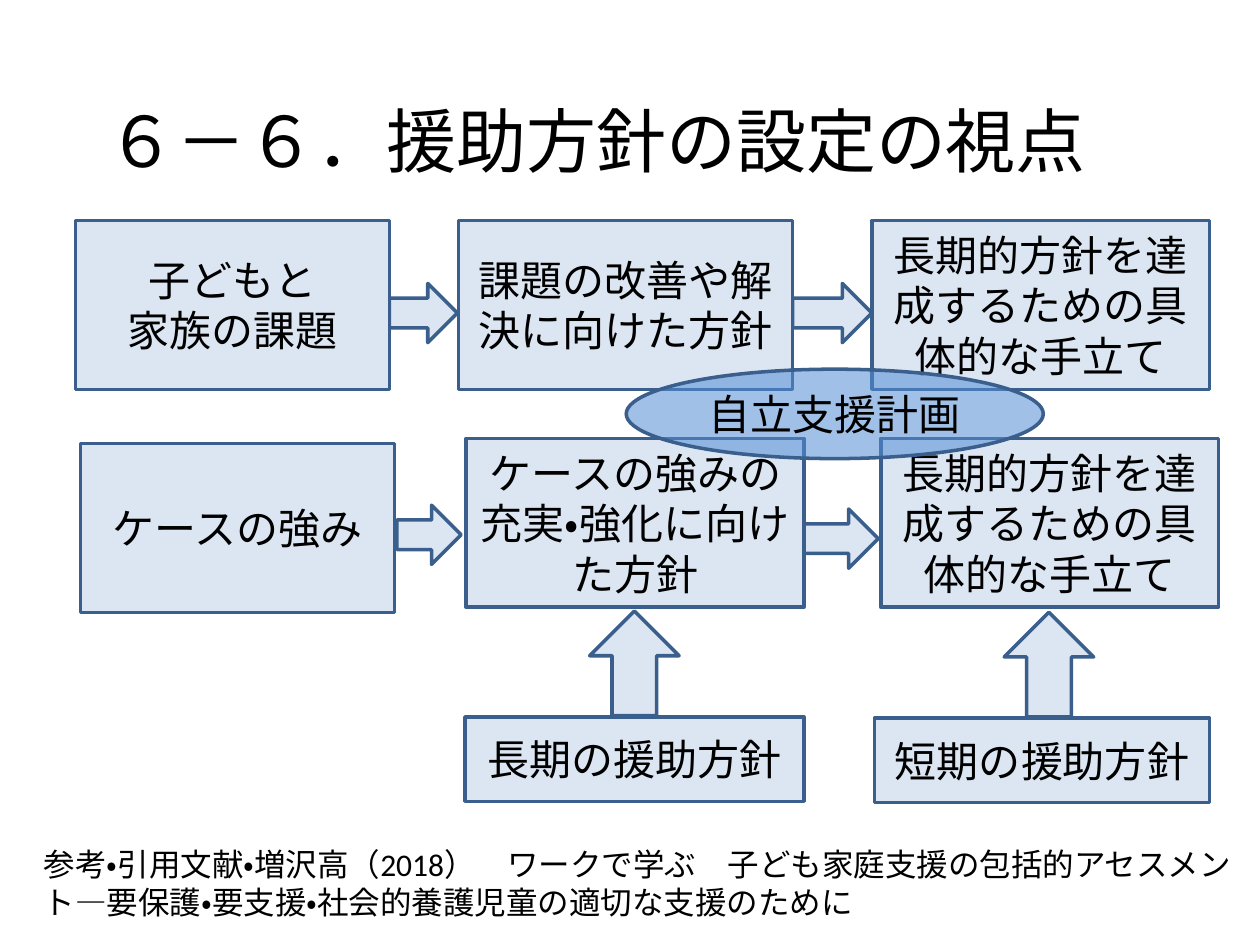
import pptx
import pptx.util
import pptx.dml.color
import pptx.enum.lang
import pptx.enum.shapes
import pptx.enum.text
import pptx.oxml
import pptx.oxml.ns
from pptx.util import Inches

SHAPE = pptx.enum.shapes.MSO_SHAPE
ALIGN = pptx.enum.text.PP_ALIGN
ANCHOR = pptx.enum.text.MSO_ANCHOR
PALE_BLUE = pptx.dml.color.RGBColor(0xDC, 0xE6, 0xF2)
MID_BLUE = pptx.dml.color.RGBColor(0x55, 0x8E, 0xD5)
EDGE_BLUE = pptx.dml.color.RGBColor(0x3A, 0x5F, 0x8C)
BLACK = pptx.dml.color.RGBColor(0, 0, 0)

ROW_HEIGHT = 1.34
GOAL_HEIGHT = 0.67
ARROW_HEIGHT = 0.47


def write(shape, lines, size, font="Calibri", align=ALIGN.CENTER, anchor=ANCHOR.MIDDLE):
    """Fill a shape with one paragraph per line."""
    frame = shape.text_frame
    frame.word_wrap = True
    frame.vertical_anchor = anchor
    for index, line in enumerate(lines):
        para = frame.paragraphs[0] if index == 0 else frame.add_paragraph()
        para.alignment = align
        span = para.add_run()
        span.text = line
        span.font.size = pptx.util.Pt(size)
        span.font.name = font
        span.font.color.rgb = BLACK
        span.font.language_id = pptx.enum.lang.MSO_LANGUAGE_ID.JAPANESE


def add_figure(page, kind, box, lines=(), fill=PALE_BLUE):
    """Draw an outlined preset shape in box (left, top, width, height)."""
    shape = page.shapes.add_shape(kind, *map(Inches, box))
    shape.shadow.inherit = False
    shape.fill.solid()
    shape.fill.fore_color.rgb = fill
    shape.line.color.rgb = EDGE_BLUE
    shape.line.width = pptx.util.Pt(2)
    write(shape, lines, 24)
    return shape


def add_text(page, box, line, size, font, anchor):
    """Place plain left-aligned text."""
    text_box = page.shapes.add_textbox(*map(Inches, box))
    write(text_box, [line], size, font, ALIGN.LEFT, anchor)


def add_flow_row(page, boxes, arrows):
    """Draw a left-to-right row; arrows lie behind the boxes they join."""
    for left, top, width in arrows:
        add_figure(page, SHAPE.RIGHT_ARROW, (left, top, width, ARROW_HEIGHT))
    for left, top, width, lines in boxes:
        add_figure(page, SHAPE.RECTANGLE, (left, top, width, ROW_HEIGHT), lines)


def add_goal(page, left, top, width, label, arrow_left):
    """Draw a goal box with an arrow rising from its top edge."""
    add_figure(page, SHAPE.UP_ARROW, (arrow_left, top - 0.84, 0.71, 0.83))
    add_figure(page, SHAPE.RECTANGLE, (left, top, width, GOAL_HEIGHT), [label])


def add_plan_oval(page, box):
    """Draw the see-through oval that spans both rows."""
    oval = add_figure(page, SHAPE.OVAL, box, ["自立支援計画"], MID_BLUE)
    color = oval.fill._xPr.find(".//" + pptx.oxml.ns.qn("a:srgbClr"))
    alpha = pptx.oxml.parse_xml(
        "<a:alpha %s val='55000'/>" % pptx.oxml.ns.nsdecls("a"))
    color.append(alpha)


def main():
    deck = pptx.Presentation()
    deck.slide_width, deck.slide_height = Inches(10), Inches(7.5)
    page = deck.slides.add_slide(deck.slide_layouts[6])

    # Title
    add_text(page, (0.75, 0.76, 8.65, 0.69), "６－６．援助方針の設定の視点",
             40, "Noto Sans CJK JP", ANCHOR.MIDDLE)

    # Long-term and short-term goals
    add_goal(page, 3.69, 5.69, 2.69, "長期の援助方針", 4.68)
    add_goal(page, 6.94, 5.7, 2.66, "短期の援助方針", 7.97)

    # Problems row
    add_flow_row(page, [
        (0.6, 1.75, 2.49, ["子どもと", "家族の課題"]),
        (3.64, 1.75, 2.65, ["課題の改善や解決に向けた方針"]),
        (6.92, 1.75, 2.68, ["長期的方針を達成するための具", "体的な手立て"]),
    ], [(3.09, 2.25, 0.54), (6.29, 2.25, 0.63)])

    # Strengths row
    add_flow_row(page, [
        (0.64, 3.52, 2.49, ["ケースの強み"]),
        (3.7, 3.48, 2.68, ["ケースの強みの充実・強化に向けた方針"]),
        (6.99, 3.48, 2.68, ["長期的方針を達成するための具体的な手立て"]),
    ], [(3.15, 4.01, 0.51), (6.18, 4.04, 0.79)])

    # Support plan and reference
    add_plan_oval(page, (4.97, 2.93, 3.31, 0.71))
    add_text(page, (0.25, 6.66, 9.63, 0.71),
             "参考・引用文献・増沢高（2018）　ワークで学ぶ　子ども家庭支援の包括的"
             "アセスメント―要保護・要支援・社会的養護児童の適切な支援のために",
             18, "Calibri", ANCHOR.TOP)

    deck.save("out.pptx")


if __name__ == "__main__":
    main()
